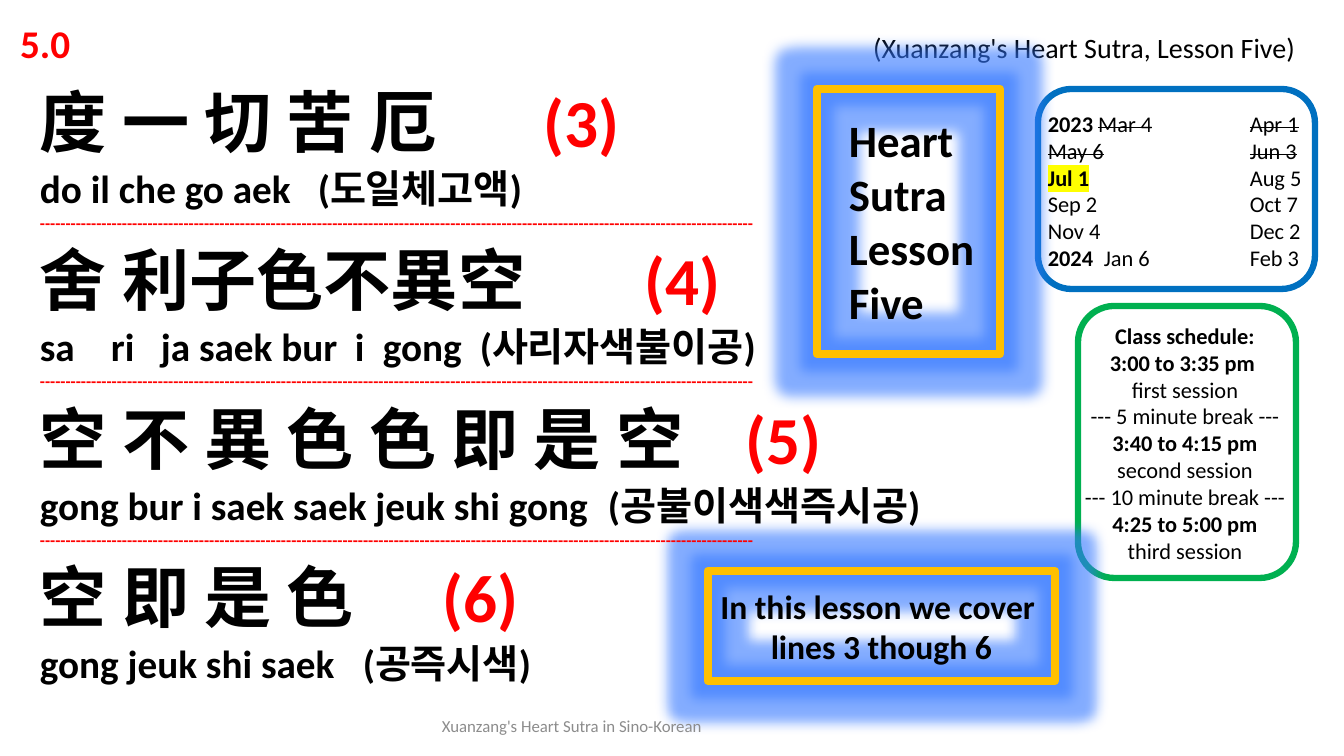
from dataclasses import dataclass
from typing import Optional

from lxml.etree import SubElement
from pptx import Presentation
from pptx.dml.color import RGBColor
from pptx.enum.shapes import MSO_SHAPE
from pptx.enum.text import MSO_ANCHOR, MSO_AUTO_SIZE, PP_ALIGN
from pptx.oxml.ns import qn
from pptx.util import Emu, Pt

SCALE = 914400 / 100.8
BLACK, RED, GRAY, GOLD = "000000", "FF0000", "8C8C8C", "FFC000"
SANS = "Calibri"


@dataclass(frozen=True)
class Run:
    text: str
    bold: Optional[bool] = None
    color: str = ""
    size: int = 0
    strike: bool = False
    mark: str = ""
    east: str = ""


@dataclass(frozen=True)
class Para:
    runs: tuple[Run, ...]
    size: int
    bold: bool = False
    color: str = BLACK
    tabs: tuple[int, ...] = ()
    align: PP_ALIGN = PP_ALIGN.LEFT
    space: float = 1.0


@dataclass(frozen=True)
class Box:
    left: int
    top: int
    width: int
    height: int


@dataclass(frozen=True)
class Frame:
    box: Box
    kind: MSO_SHAPE
    color: str
    weight: float
    glow: str = ""


@dataclass(frozen=True)
class Verse:
    hanja: str
    number: str
    stop: int
    sound: str
    stops: tuple[int, ...]
    hangul: str
    east: str = "Arial"


def px(count: int) -> Emu:
    return Emu(round(count * SCALE))


def rgb(code: str) -> RGBColor:
    return RGBColor.from_string(code)


def place(shape, box: Box) -> None:
    shape.left, shape.top = px(box.left), px(box.top)
    shape.width, shape.height = px(box.width), px(box.height)


def add_run(par, item: Run) -> None:
    run = par.add_run()
    run.text = item.text
    if item.bold is not None:
        run.font.bold = item.bold
    if item.size:
        run.font.size = Pt(item.size)
    if item.color:
        run.font.color.rgb = rgb(item.color)
    props = run._r.get_or_add_rPr()
    if item.strike:
        props.set("strike", "sngStrike")
    if item.mark:
        mark = SubElement(props, qn("a:highlight"))
        SubElement(mark, qn("a:srgbClr"), val=item.mark)
    if item.east:
        SubElement(props, qn("a:ea"), typeface=item.east)


def write(shape, paras: list[Para], anchor: MSO_ANCHOR = MSO_ANCHOR.TOP) -> None:
    frame = shape.text_frame
    frame.word_wrap = True
    frame.auto_size = MSO_AUTO_SIZE.NONE
    frame.vertical_anchor = anchor
    for index, item in enumerate(paras):
        par = frame.add_paragraph() if index else frame.paragraphs[0]
        par.alignment = item.align
        par.line_spacing = item.space
        par.space_before = par.space_after = Pt(0)
        par.font.name = SANS
        par.font.size = Pt(item.size)
        par.font.bold = item.bold
        par.font.color.rgb = rgb(item.color)
        props = par._p.get_or_add_pPr()
        base = props.find(qn("a:defRPr"))
        SubElement(base, qn("a:ea"), typeface=SANS)
        if item.tabs:
            stops = SubElement(props, qn("a:tabLst"))
            for stop in item.tabs:
                SubElement(stops, qn("a:tab"), pos=str(px(stop)), algn="l")
            base.addprevious(stops)
        for run in item.runs:
            add_run(par, run)


def add_text(slide, box: Box, paras: list[Para], anchor: MSO_ANCHOR = MSO_ANCHOR.TOP) -> None:
    shape = slide.shapes.add_textbox(0, 0, 0, 0)
    place(shape, box)
    write(shape, paras, anchor)


def add_frame(slide, item: Frame) -> None:
    shape = slide.shapes.add_shape(item.kind, 0, 0, 0, 0)
    place(shape, item.box)
    shape.shadow.inherit = False
    shape.fill.background()
    shape.line.color.rgb = rgb(item.color)
    shape.line.width = Pt(item.weight)
    if item.glow:
        effects = shape._element.spPr.find(qn("a:effectLst"))
        glow = SubElement(effects, qn("a:glow"), rad=str(Pt(18)))
        tint = SubElement(glow, qn("a:srgbClr"), val=item.glow)
        SubElement(tint, qn("a:alpha"), val="60000")


VERSES = [
    Verse("度 一 切 苦 厄", "(3)", 504, "do il che go aek\t", (278,), "(도일체고액)"),
    Verse("舍 利子色不異空", "(4)", 605, "sa\tri\tja saek bur\ti\tgong\t(",
          (71, 121, 315, 343, 440), "사리자색불이공)"),
    Verse("空 不 異 色 色 即 是 空", "(5)", 706,
          "gong bur i saek saek jeuk shi gong\t", (568,), "(공불이색색즉시공)", "Noto Sans CJK KR"),
    Verse("空 即 是 色", "(6)", 403, "gong jeuk shi saek\t", (323,), "(공즉시색)"),
]

DATES = [
    (Run("2023 ", True), Run("Mar 4", strike=True), Run("\t"), Run("Apr 1", strike=True)),
    (Run("May 6", strike=True), Run("\t"), Run("Jun 3", strike=True)),
    (Run("Jul 1", True, mark="FFFF00"), Run("\tAug 5")),
    (Run("Sep 2\tOct 7"),),
    (Run("Nov 4\tDec 2"),),
    (Run("2024", True), Run("\tJan 6\tFeb 3")),
]

CLASS = [
    ("Class schedule:", True), ("3:00 to 3:35 pm ", True), ("first session", False),
    ("--- 5 minute break ---", False), ("3:40 to 4:15 pm", True), ("second session", False),
    ("--- 10 minute break ---", False), ("4:25 to 5:00 pm", True), ("third session", False),
]

FRAMES = [
    Frame(Box(1038, 89, 277, 200), MSO_SHAPE.ROUNDED_RECTANGLE, "0070C0", 4.5),
    Frame(Box(1078, 306, 218, 272), MSO_SHAPE.ROUNDED_RECTANGLE, "00B050", 4.5),
    Frame(Box(817, 89, 183, 265), MSO_SHAPE.RECTANGLE, GOLD, 6, "3377FF"),
    Frame(Box(708, 571, 347, 110), MSO_SHAPE.RECTANGLE, GOLD, 6, "3377FF"),
]


def verses() -> list[Para]:
    paras: list[Para] = []
    for verse in VERSES:
        if paras:
            paras.append(Para((Run("-" * 139),), 12, True, RED, space=1.07))
        head = (Run(verse.hanja + "\t"), Run(verse.number, color=RED))
        paras.append(Para(head, 48, True, tabs=(verse.stop,), space=1.07))
        sound = (Run(verse.sound), Run(verse.hangul, east=verse.east))
        paras.append(Para(sound, 28, True, tabs=verse.stops, space=1.07))
    return paras


def main() -> None:
    deck = Presentation()
    deck.slide_width, deck.slide_height = px(1344), px(756)
    slide = deck.slides.add_slide(deck.slide_layouts[5])
    center = PP_ALIGN.CENTER

    title = slide.shapes.title
    place(title, Box(10, 11, 1324, 58))
    head = (Run("5.0\t", True, RED, 28), Run("(Xuanzang's Heart Sutra, Lesson Five)"))
    write(title, [Para(head, 20, tabs=(853,), space=1.07)])

    for frame in FRAMES:
        add_frame(slide, frame)
    add_text(slide, Box(30, 70, 991, 639), verses())
    add_text(slide, Box(345, 706, 454, 40),
             [Para((Run("Xuanzang's Heart Sutra in Sino-Korean"),), 12, color=GRAY, align=center)],
             MSO_ANCHOR.MIDDLE)
    add_text(slide, Box(1038, 105, 275, 172),
             [Para(runs, 16, tabs=(56, 202) if len(runs) == 2 and runs[0].text == "2024" else (202,))
              for runs in DATES])
    add_text(slide, Box(1054, 317, 262, 254),
             [Para((Run(text),), 16, bold, align=center) for text, bold in CLASS])
    add_text(slide, Box(839, 108, 161, 228),
             [Para((Run(word),), 32, True) for word in ("Heart", "Sutra", "Lesson", "Five")])
    add_text(slide, Box(665, 581, 433, 92),
             [Para((Run(text),), 24, True, align=center)
              for text in ("In this lesson we cover ", "lines 3 though 6")])
    deck.save("out.pptx")


if __name__ == "__main__":
    main()
